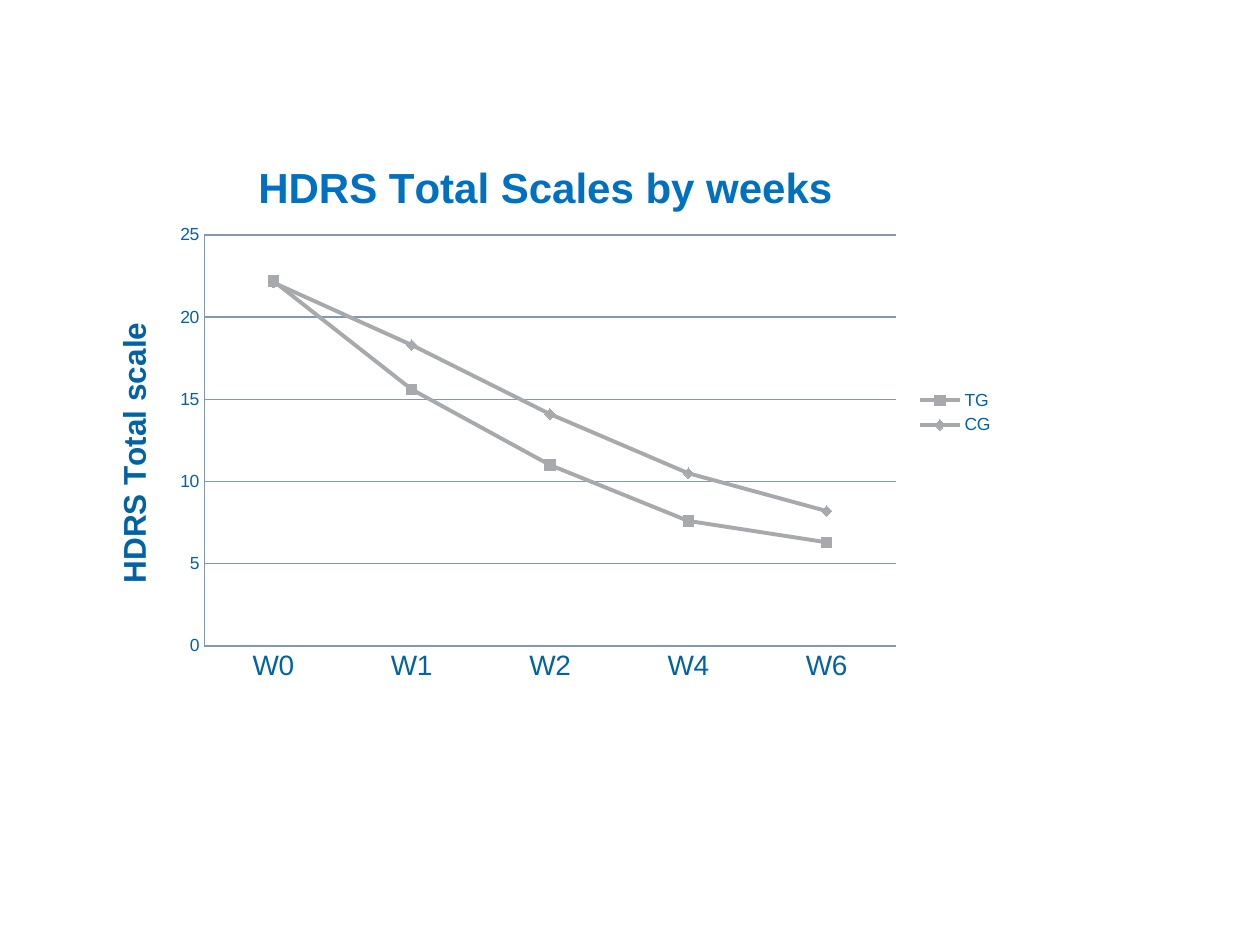
from lxml import etree
from pptx import Presentation
from pptx.chart.data import CategoryChartData
from pptx.dml.color import RGBColor
from pptx.enum.chart import XL_CHART_TYPE, XL_LEGEND_POSITION, XL_MARKER_STYLE, XL_TICK_MARK
from pptx.oxml.ns import qn
from pptx.util import Cm, Pt

COLORS = {"text": "0063A4", "title": "0070C0", "series": "A7A9AC", "grid": "8497B0"}
WEEKS = ["W0", "W1", "W2", "W4", "W6"]
SCORES = {
    "TG": ([22.2, 15.6, 11, 7.6, 6.3], XL_MARKER_STYLE.SQUARE),
    "CG": ([22.1, 18.3, 14.1, 10.5, 8.2], XL_MARKER_STYLE.DIAMOND),
}
PLOT_AREA = {"x": 0.13, "y": 0.18, "w": 0.75, "h": 0.74}


class ScaleSlide:
    """Holds the chart style and the current slide."""

    def __init__(self, presentation):
        self.font_name = "Arial"
        self.slide = presentation.slides.add_slide(presentation.slide_layouts[6])

    def style_font(self, font, size, color="text", bold=False):
        font.name = self.font_name
        font.size = Pt(size)
        font.bold = bold
        font.color.rgb = RGBColor.from_string(COLORS[color])

    def style_line(self, line, color, width):
        line.color.rgb = RGBColor.from_string(COLORS[color])
        line.width = Pt(width)

    def add_heading(self, owner, text, size, color="text"):
        paragraph = owner.text_frame.paragraphs[0]
        paragraph.text = text
        self.style_font(paragraph.runs[0].font, size, color, bold=True)

    def place_plot(self, chart, area):
        plot_area = chart.element.find(".//" + qn("c:plotArea"))
        for old_layout in plot_area.findall(qn("c:layout")):
            plot_area.remove(old_layout)
        layout = etree.Element(qn("c:layout"))
        manual = etree.SubElement(layout, qn("c:manualLayout"))
        settings = {"layoutTarget": "inner", "xMode": "edge", "yMode": "edge", **area}
        for tag, value in settings.items():
            etree.SubElement(manual, qn(f"c:{tag}")).set("val", str(value))
        plot_area.insert(0, layout)

    def style_axis(self, axis, size):
        axis.major_tick_mark = XL_TICK_MARK.NONE
        axis.minor_tick_mark = XL_TICK_MARK.NONE
        self.style_font(axis.tick_labels.font, size)
        self.style_line(axis.format.line, "grid", 0.75)

    def style_series(self, series, marker_style):
        series.smooth = False
        self.style_line(series.format.line, "series", 2.25)
        series.marker.style = marker_style
        series.marker.size = 6
        series.marker.format.fill.solid()
        series.marker.format.fill.fore_color.rgb = RGBColor.from_string(COLORS["series"])
        self.style_line(series.marker.format.line, "series", 0.75)

    def add_line_chart(self, left, top, width, height, title, scale_name):
        scores = CategoryChartData()
        scores.categories = WEEKS
        for group, (values, _) in SCORES.items():
            scores.add_series(group, values)
        chart = self.slide.shapes.add_chart(
            XL_CHART_TYPE.LINE_MARKERS, left, top, width, height, scores
        ).chart
        self.style_font(chart.font, 10)
        chart.has_title = True
        self.add_heading(chart.chart_title, title, 24, "title")
        self.place_plot(chart, PLOT_AREA)

        self.style_axis(chart.category_axis, 16)
        scale = chart.value_axis
        self.style_axis(scale, 10)
        scale.minimum_scale, scale.maximum_scale, scale.major_unit = 0, 25, 5
        scale.has_major_gridlines = True
        self.style_line(scale.major_gridlines.format.line, "grid", 0.75)
        self.add_heading(scale.axis_title, scale_name, 18)

        chart.has_legend = True
        chart.legend.position = XL_LEGEND_POSITION.RIGHT
        chart.legend.include_in_layout = False
        self.style_font(chart.legend.font, 10)
        chart.plots[0].vary_by_categories = False
        for series in chart.plots[0].series:
            self.style_series(series, SCORES[series.name][1])


def main():
    presentation = Presentation()
    presentation.slide_width, presentation.slide_height = Cm(25.4), Cm(19.05)
    ScaleSlide(presentation).add_line_chart(
        Cm(1.7), Cm(2.72), Cm(18.59), Cm(11.2),
        "HDRS Total Scales by weeks", "HDRS Total scale",
    )
    presentation.save("out.pptx")


if __name__ == "__main__":
    main()
